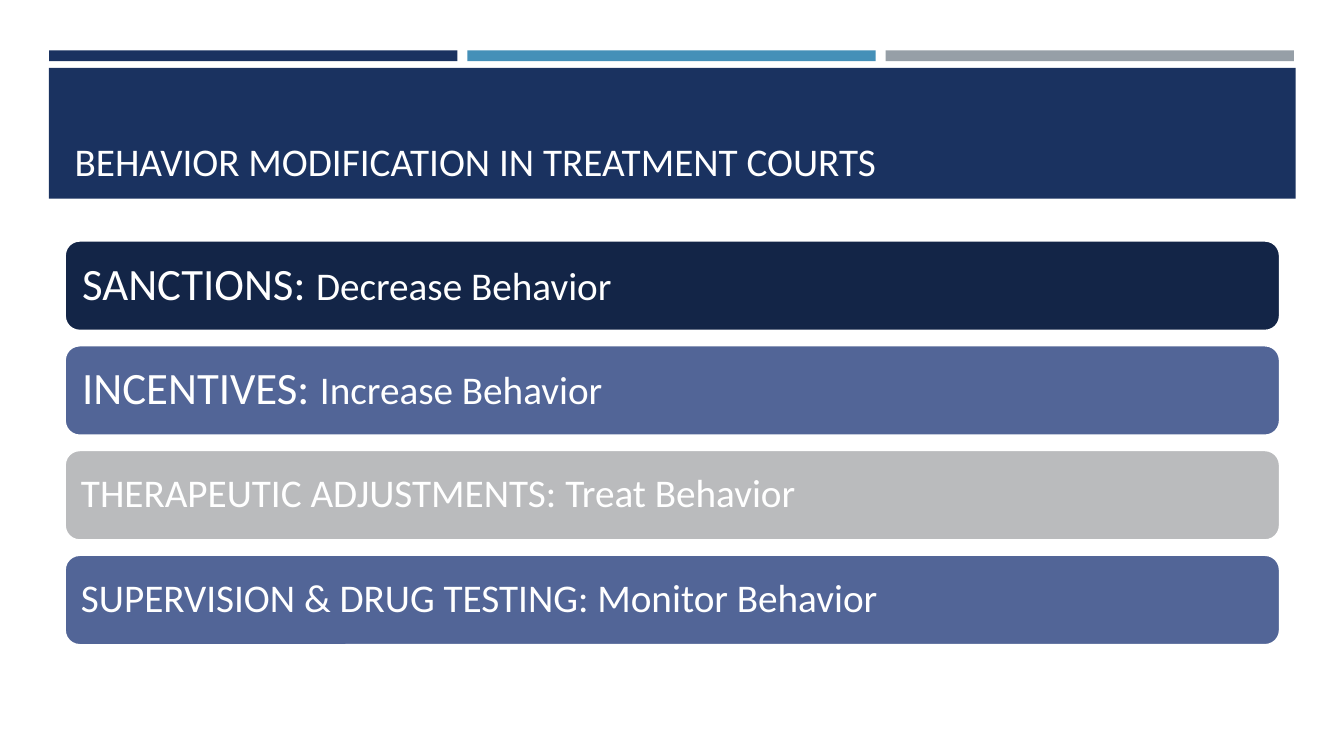
from pptx import Presentation, util as u
from pptx.dml.color import RGBColor
from pptx.enum import shapes, text

NAVY, WHITE = "1A3260", "FFFFFF"


def paint(target, color):
    """Give a fill one solid colour."""
    target.solid()
    target.fore_color.rgb = RGBColor.from_string(color)


def write(box, spans, anchor, inset=0.25, spacing=1.0):
    """Write (wording, size) spans as one left-aligned line."""
    frame = box.text_frame
    frame.auto_size = text.MSO_AUTO_SIZE.NONE
    frame.word_wrap = True
    frame.vertical_anchor = anchor
    frame.margin_left = frame.margin_right = u.Cm(inset)
    para = frame.paragraphs[0]
    para.alignment = text.PP_ALIGN.LEFT
    para.line_spacing = spacing
    for wording, size in spans:
        span = para.add_run()
        span.text = wording
        span.font.name = "Calibri"
        span.font.size = u.Pt(size)
        paint(span.font.fill, WHITE)


deck = Presentation()
deck.slide_width, deck.slide_height = u.Cm(33.87), u.Cm(19.05)
page = deck.slides.add_slide(deck.slide_layouts[5])
title = page.shapes.title

# Three accent strips above the title banner, all behind the title
bands = [(1.24 + 10.54 * column, 1.27, 10.29, 0.27, color)
         for column, color in enumerate([NAVY, "4590B8", "969FA7"])]
bands.append((1.23, 1.71, 31.42, 3.3, NAVY))
for left, top, width, height, color in bands:
    band = page.shapes.add_shape(shapes.MSO_SHAPE.RECTANGLE, u.Cm(left),
                                 u.Cm(top), u.Cm(width), u.Cm(height))
    band.shadow.inherit = False
    paint(band.fill, color)
    band.line.fill.background()
    title.element.addprevious(band.element)

# Title
title.left, title.top = u.Cm(1.63), u.Cm(1.96)
title.width, title.height = u.Cm(30.63), u.Cm(2.82)
write(title, [("BEHAVIOR MODIFICATION IN TREATMENT COURTS", 28)],
      text.MSO_ANCHOR.BOTTOM)

# Stacked response bars: fill, text inset, spans
responses = [
    ("132547", 0.33, [("SANCTIONS: ", 32), ("Decrease Behavior", 28)]),
    ("526597", 0.33, [("INCENTIVES: ", 32), ("Increase Behavior", 28)]),
    ("BABBBD", 0.3, [("THERAPEUTIC ADJUSTMENTS: Treat Behavior", 28)]),
    ("526597", 0.3, [("SUPERVISION & DRUG TESTING: Monitor Behavior", 28)]),
]
for row, (color, inset, spans) in enumerate(responses):
    bar = page.shapes.add_shape(shapes.MSO_SHAPE.ROUNDED_RECTANGLE, u.Cm(1.63),
                                u.Cm(6.06 + 2.64 * row), u.Cm(30.63), u.Cm(2.28))
    bar.shadow.inherit = False
    paint(bar.fill, color)
    paint(bar.line.fill, WHITE)
    bar.line.width = u.Pt(1.75)
    write(bar, spans, text.MSO_ANCHOR.MIDDLE, inset, 0.9)

deck.save("out.pptx")
